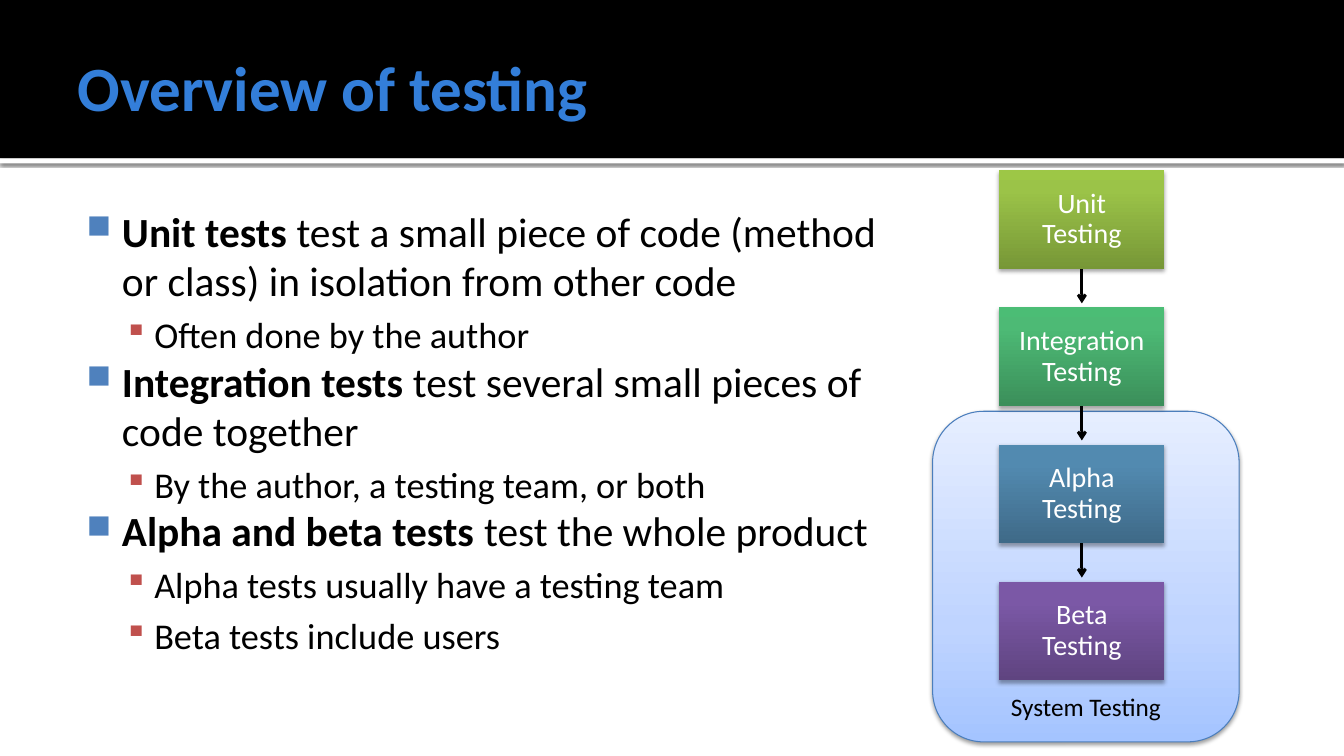
import copy
import pptx
import pptx.util
import pptx.dml.color
import pptx.enum.shapes
import pptx.enum.text
import pptx.oxml
import pptx.oxml.ns

TITLE = "Overview of testing"
POINTS = [
    (0, "Unit tests", " test a small piece of code (method or class) in isolation from other code"),
    (1, "", "Often done by the author"),
    (0, "Integration tests", " test several small pieces of code together"),
    (1, "", "By the author, a testing team, or both"),
    (0, "Alpha and beta tests", " test the whole product"),
    (1, "", "Alpha tests usually have a testing team"),
    (1, "", "Beta tests include users"),
]
LEVELS = [
    dict(size=29.6, before=0, margin=0.48, indent=-0.35, mark="■", tint="4F81BD", scale=80),
    dict(size=25.9, before=5, margin=0.8, indent=-0.3, mark="▪", tint="C0504D", scale=90),
]
STAGES = [
    ("Unit Testing", ("779737", "9BC348", "9DC746")),
    ("Integration Testing", ("3B8F5A", "4DBA75", "4BBD75")),
    ("Alpha Testing", ("3F6A88", "528AB0", "518BB3")),
    ("Beta Testing", ("5F4480", "7B58A6", "7C57A8")),
]
SYSTEM = ("System Testing", ("A4C4FF", "BFD4FF", "E6EEFF"))

WIDTH, HEIGHT = 13.33, 7.5
BAND = 1.57
STAGE_LEFT, STAGE_TOP, STAGE_WIDTH, STAGE_HEIGHT = 9.91, 1.69, 1.64, 0.98
STAGE_PITCH, ARROW = 1.36, 0.34

INCH = pptx.util.Inches
SHAPE = pptx.enum.shapes.MSO_SHAPE
ANCHOR = pptx.enum.text.MSO_ANCHOR
CENTER = pptx.enum.text.PP_ALIGN.CENTER
QN = pptx.oxml.ns.qn


def color(value):
    return pptx.dml.color.RGBColor.from_string(value)


def add_xml(parent, markup):
    head, tail = markup.split(" ", 1) if " " in markup.split(">")[0] else (markup[:-2], "/>")
    parent.append(pptx.oxml.parse_xml(f"{head} {pptx.oxml.ns.nsdecls('a')} {tail}"))


def add_span(para, text, size, tint, bold=False):
    span = para.add_run()
    span.text = text
    span.font.name = "Calibri"
    span.font.size = pptx.util.Pt(size)
    span.font.bold = bold
    span.font.color.rgb = color(tint)


def set_frame(frame, anchor, insets):
    frame.word_wrap = True
    frame.vertical_anchor = anchor
    frame.margin_left, frame.margin_top, frame.margin_right, frame.margin_bottom = map(INCH, insets)
    return frame.paragraphs[0]


def add_box(kind, area, shadow=None):
    box = page.shapes.add_shape(kind, *map(INCH, area))
    box.shadow.inherit = False
    box.line.fill.background()
    if shadow:
        alpha, blur, distance = shadow
        effects = box._element.spPr.find(QN("a:effectLst"))
        add_xml(effects, f'<a:outerShdw blurRad="{pptx.util.Pt(blur)}" dist="{pptx.util.Pt(distance)}" '
                f'dir="5400000" rotWithShape="0"><a:srgbClr val="000000">'
                f'<a:alpha val="{alpha * 1000}"/></a:srgbClr></a:outerShdw>')
    return box


def fill_solid(box, tint):
    box.fill.solid()
    box.fill.fore_color.rgb = color(tint)


def fill_gradient(box, tints, middle):
    box.fill.gradient()
    box.fill.gradient_angle = 90
    stops = box._element.spPr.find(".//" + QN("a:gsLst"))
    stops.append(copy.deepcopy(stops[0]))
    for stop, tint, position in zip(box.fill.gradient_stops, tints, (0, middle, 1)):
        stop.color.rgb = color(tint)
        stop.position = position


def add_bands():
    fill_solid(add_box(SHAPE.RECTANGLE, (0, BAND, WIDTH, 0.05), (60, 2.5, 0.8)), "FFFFFF")
    fill_solid(add_box(SHAPE.RECTANGLE, (0, 0, WIDTH, BAND)), "000000")


def add_system():
    text, tints = SYSTEM
    box = add_box(SHAPE.ROUNDED_RECTANGLE, (9.25, 4.08, 3.04, 3.28), (38, 3.1, 1.6))
    fill_gradient(box, tints, 0.35)
    box.line.color.rgb = color("4B7EBC")
    box.line.width = pptx.util.Pt(0.75)
    para = set_frame(box.text_frame, ANCHOR.BOTTOM, (0.1, 0.05, 0.1, 0.05))
    para.alignment = CENTER
    add_span(para, text, 18, "000000")


def add_title():
    box = page.shapes.add_textbox(*map(INCH, (0.67, 0.17, 12, 1.37)))
    para = set_frame(box.text_frame, ANCHOR.MIDDLE, (0.1, 0.05, 0.05, 0.05))
    add_span(para, TITLE, 45, "337ED9", True)


def add_points():
    box = page.shapes.add_textbox(*map(INCH, (0.67, 1.94, 8.42, 5.06)))
    para = set_frame(box.text_frame, ANCHOR.TOP, (0.06, 0.1, 0.1, 0.05))
    for index, (level, term, rest) in enumerate(POINTS):
        if index:
            para = box.text_frame.add_paragraph()
        style = LEVELS[level]
        para.level = level
        para.space_before = pptx.util.Pt(style["before"])
        props = para._p.get_or_add_pPr()
        props.set("marL", str(INCH(style["margin"])))
        props.set("indent", str(INCH(style["indent"])))
        add_xml(props, f'<a:buClr ><a:srgbClr val="{style["tint"]}"/></a:buClr>')
        add_xml(props, f'<a:buSzPct val="{style["scale"] * 1000}"/>')
        add_xml(props, f'<a:buChar char="{style["mark"]}"/>')
        if term:
            add_span(para, term, style["size"], "000000", True)
        add_span(para, rest, style["size"], "000000")


def add_stages():
    for index, (text, tints) in enumerate(STAGES):
        top = STAGE_TOP + index * STAGE_PITCH
        box = add_box(SHAPE.RECTANGLE, (STAGE_LEFT, top, STAGE_WIDTH, STAGE_HEIGHT), (35, 3.1, 1.8))
        fill_gradient(box, tints, 0.8)
        para = set_frame(box.text_frame, ANCHOR.MIDDLE, (0.16,) * 4)
        para.alignment = CENTER
        para.line_spacing = 0.9
        add_span(para, text, 20, "FFFFFF")
        if index < len(STAGES) - 1:
            add_arrow(box, STAGE_LEFT + STAGE_WIDTH / 2, top + STAGE_HEIGHT)


def add_arrow(box, middle, start):
    arrow = page.shapes.add_connector(
        pptx.enum.shapes.MSO_CONNECTOR.STRAIGHT, *map(INCH, (middle, start, middle, start + ARROW)))
    arrow.begin_connect(box, 2)
    arrow.line.color.rgb = color("000000")
    arrow.line.width = pptx.util.Pt(2)
    add_xml(arrow.line._get_or_add_ln(), '<a:tailEnd type="arrow"/>')
    add_xml(arrow._element.spPr, "<a:effectLst/>")


deck = pptx.Presentation()
deck.slide_width, deck.slide_height = INCH(WIDTH), INCH(HEIGHT)
page = deck.slides.add_slide(deck.slide_layouts[6])
add_bands()
add_system()
add_title()
add_points()
add_stages()
deck.save("out.pptx")
